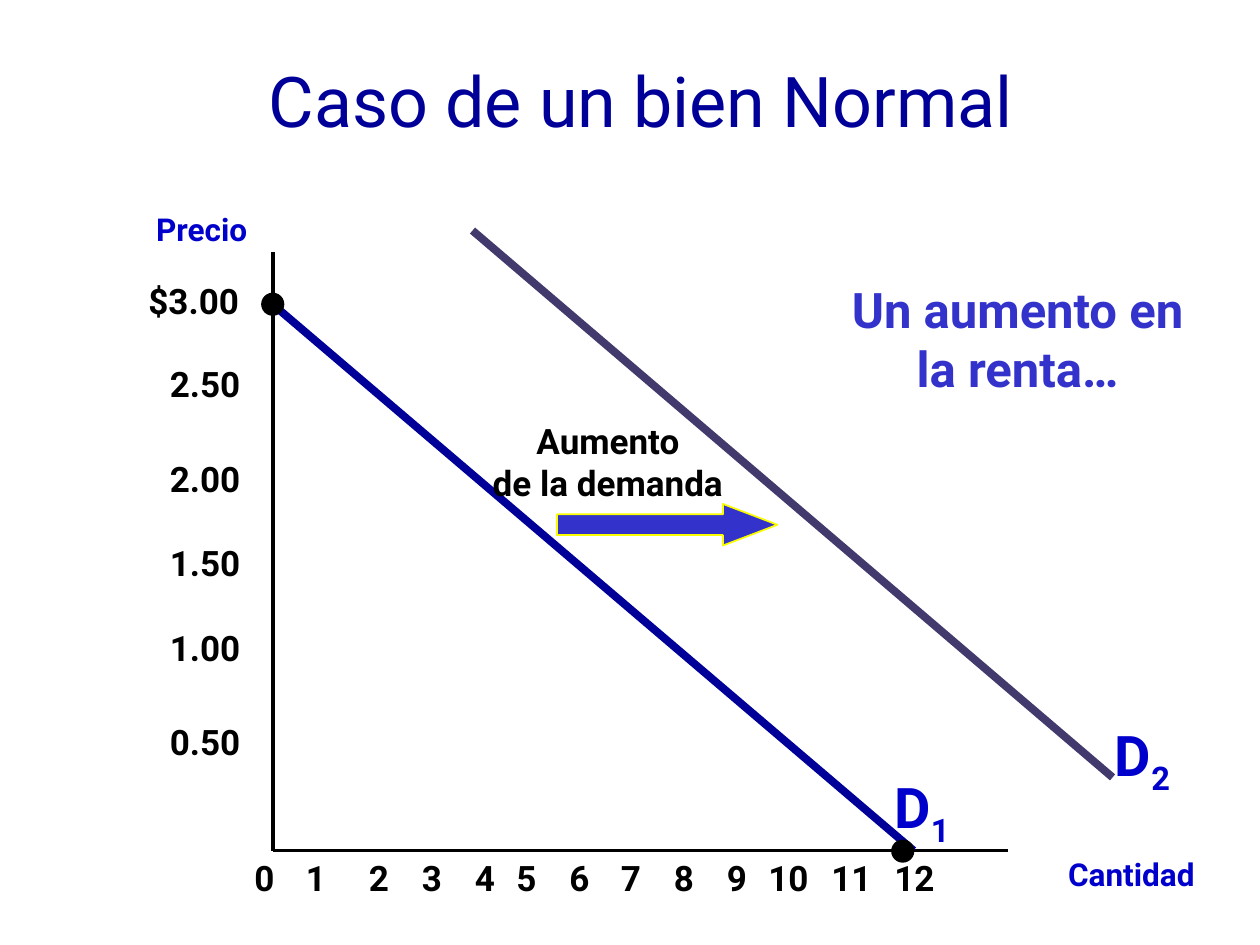
from pptx import Presentation
from pptx.dml.color import RGBColor
from pptx.enum import shapes, text
from pptx.oxml import ns
from pptx.util import Inches, Pt
from lxml import etree

FONT = "Roboto"
COLORS = {
    "ink": "000000",
    "title": "000099",
    "label": "0000CC",
    "accent": "3333CC",
    "shifted": "423A6C",
    "outline": "FAFD00",
    "paper": "FFFFFF",
}
PRICES = [("2.50", 2.83), ("2.00", 3.58), ("1.50", 4.25), ("1.00", 4.92), ("0.50", 5.67)]
QUANTITY_LEFTS = [1.92, 2.33, 2.83, 3.25, 3.67, 4, 4.42, 4.83, 5.25, 5.67, 6, 6.5, 7]


def color(name):
    return RGBColor.from_string(COLORS[name])


def style(paragraph, size, name, bold=True, align=text.PP_ALIGN.LEFT):
    paragraph.alignment = align
    font = paragraph.font
    font.name, font.size, font.bold = FONT, Pt(size), bold
    font.color.rgb = color(name)


def add_label(slide, box, words, size=20, name="ink", align=text.PP_ALIGN.LEFT):
    shape = slide.shapes.add_textbox(*map(Inches, box))
    frame = shape.text_frame
    frame.word_wrap = True
    frame.text = words
    for paragraph in frame.paragraphs:
        style(paragraph, size, name, align=align)
    return shape


def add_line(slide, start, end, name, width):
    line = slide.shapes.add_connector(
        shapes.MSO_CONNECTOR.STRAIGHT, *map(Inches, (*start, *end)))
    line.line.color.rgb = color(name)
    line.line.width = Pt(width)
    etree.SubElement(line._element.spPr, ns.qn("a:effectLst"))


def add_filled(slide, kind, box, fill, outline):
    shape = slide.shapes.add_shape(kind, *map(Inches, box))
    shape.shadow.inherit = False
    shape.fill.solid()
    shape.fill.fore_color.rgb = color(fill)
    shape.line.color.rgb = color(outline)
    shape.line.width = Pt(1)
    return shape


def add_title(slide, box):
    title = slide.shapes.title
    title.left, title.top, title.width, title.height = map(Inches, box)
    frame = title.text_frame
    frame.text = "Caso de un bien Normal"
    frame.vertical_anchor = text.MSO_ANCHOR.MIDDLE
    style(frame.paragraphs[0], 40, "title", False, text.PP_ALIGN.CENTER)
    frame.paragraphs[0].line_spacing = 0.9


def add_axes(slide, box):
    left, top, width, height = box
    bottom = top + height
    add_line(slide, (left, top), (left, bottom), "ink", 2.25)
    add_line(slide, (left, bottom), (left + width, bottom), "ink", 2.25)

    # Price scale
    add_label(slide, (1.08, 2.17, 1, 0.43), "$3.00")
    for price, label_top in PRICES:
        add_label(slide, (1.25, label_top, 0.83, 0.43), price)

    # Quantity scale
    for quantity, label_left in enumerate(QUANTITY_LEFTS):
        label_width = 0.5 if quantity < 9 else 0.58
        add_label(slide, (label_left, bottom, label_width, 0.43), str(quantity))

    # Axis names
    add_label(slide, (1.14, 1.62, 2.38, 0.4), "Precio", 18, "label")
    add_label(slide, (7.91, 6.74, 1.67, 0.4), "Cantidad", 18, "label",
              text.PP_ALIGN.RIGHT)


def add_demand(slide, start, end, name, subscript, label_box):
    add_line(slide, start, end, name, 4.5)
    label = add_label(slide, label_box, "D", 32, "label")
    run = label.text_frame.paragraphs[0].add_run()
    run.text = subscript
    run._r.get_or_add_rPr().set("baseline", "-25000")


def add_intercepts(slide):
    for left, top in ((7.08, 6.67), (2.08, 2.33)):
        add_filled(slide, shapes.MSO_SHAPE.OVAL, (left, top, 0.17, 0.17), "ink", "ink")


def add_shift(slide, box):
    left, top, width, height = box
    arrow = add_filled(slide, shapes.MSO_SHAPE.RIGHT_ARROW,
                       (left, top + 0.67, width, height - 0.67), "accent", "outline")
    arrow.adjustments[0], arrow.adjustments[1] = 0.5, 1.31
    caption = add_label(slide, (left - 0.62, top, 2.05, 0.67),
                        "Aumento\nde la demanda", align=text.PP_ALIGN.CENTER)
    frame = caption.text_frame
    frame.word_wrap = False
    frame.margin_left = frame.margin_right = frame.margin_top = frame.margin_bottom = 0


def add_callout(slide, box):
    callout = add_label(slide, box, "Un aumento en la renta…", 28, "accent",
                        text.PP_ALIGN.CENTER)
    callout.fill.solid()
    callout.fill.fore_color.rgb = color("paper")


def main():
    presentation = Presentation()
    presentation.slide_width, presentation.slide_height = Inches(10), Inches(7.5)
    slide = presentation.slides.add_slide(presentation.slide_layouts[5])

    add_title(slide, (0.5, 0.17, 9.17, 1.33))
    add_axes(slide, (2.17, 2, 5.83, 4.75))
    add_demand(slide, (2.17, 2.42), (7.25, 6.75), "title", "1", (7, 6.08, 0.83, 0.63))
    add_intercepts(slide)
    add_demand(slide, (3.75, 1.83), (8.83, 6.17), "shifted", "2", (8.75, 5.67, 0.83, 0.63))
    add_shift(slide, (4.42, 3.33, 1.75, 1))
    add_callout(slide, (6.5, 2.17, 3.15, 1.03))

    presentation.save("out.pptx")


if __name__ == "__main__":
    main()
